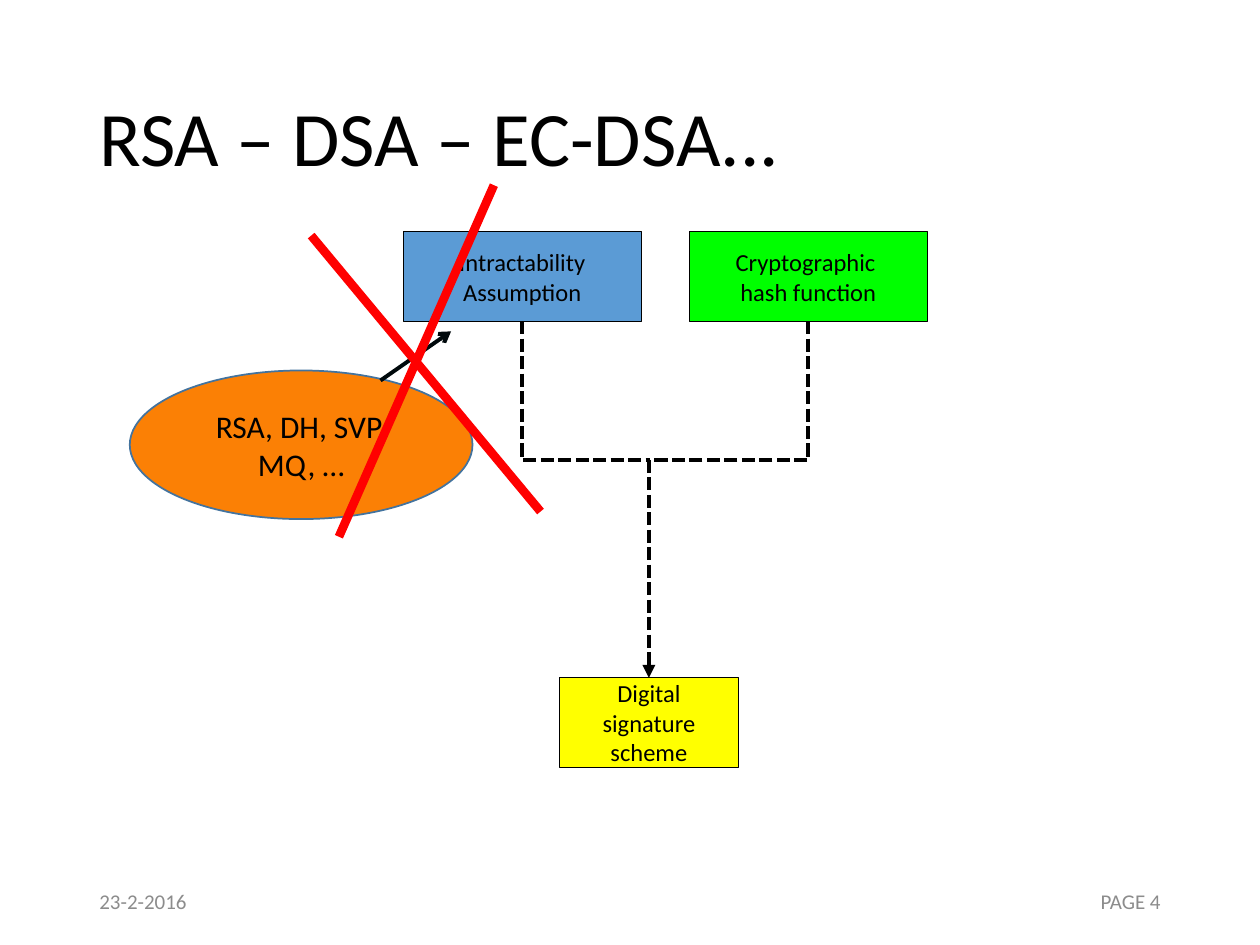
from lxml import etree
from pptx import Presentation
from pptx.dml.color import RGBColor
from pptx.enum.dml import MSO_LINE
from pptx.enum.shapes import MSO_CONNECTOR, MSO_SHAPE
from pptx.enum.text import MSO_ANCHOR, PP_ALIGN
from pptx.oxml.ns import qn
from pptx.util import Inches, Pt

STRAIGHT, ELBOW = MSO_CONNECTOR.STRAIGHT, MSO_CONNECTOR.ELBOW
RECT, OVAL = MSO_SHAPE.RECTANGLE, MSO_SHAPE.OVAL
LEFT, CENTER, RIGHT = PP_ALIGN.LEFT, PP_ALIGN.CENTER, PP_ALIGN.RIGHT
MIDDLE, DASH = MSO_ANCHOR.MIDDLE, MSO_LINE.SQUARE_DOT
COLORS = {
    "black": "000000", "ink": "00090C", "grey": "8C8C8C", "blue": "5B9BD5",
    "green": "00FF00", "yellow": "FFFF00", "orange": "FB8005",
    "outline": "43739E", "red": "FF0000",
}


class Deck:
    """Holds the style and the current slide, and draws each kind of element."""

    font = "Calibri"

    def __init__(self, prs):
        self.slide = prs.slides.add_slide(prs.slide_layouts[6])
        self.shapes = self.slide.shapes

    def color(self, name):
        return RGBColor.from_string(COLORS[name])

    def set_text(self, sp, text, size, color="black", align=CENTER, spacing=1.0):
        tf = sp.text_frame
        for key, value in {"word_wrap": True, "vertical_anchor": MIDDLE}.items():
            setattr(tf, key, value)
        p = tf.paragraphs[0]
        p.text = text
        for key, value in {"alignment": align, "line_spacing": spacing}.items():
            setattr(p, key, value)
        for r in p.runs:
            for key, value in {"name": self.font, "size": Pt(size)}.items():
                setattr(r.font, key, value)
            r.font.color.rgb = self.color(color)

    def text(self, box, text, size, **style):
        sp = self.shapes.add_textbox(*map(Inches, box))
        self.set_text(sp, text, size, **style)

    def shape(self, kind, box, text, fill, size=14, line="black", width=0.5):
        sp = self.shapes.add_shape(kind, *map(Inches, box))
        sp.shadow.inherit = False
        sp.fill.solid()
        sp.fill.fore_color.rgb = self.color(fill)
        self.stroke(sp, line, width)
        self.set_text(sp, text, size)
        return sp

    def stroke(self, sp, color, width, dash=None):
        sp.line.color.rgb = self.color(color)
        for key, value in {"width": Pt(width), "dash_style": dash}.items():
            setattr(sp.line, key, value)

    def line(self, start, end, color, width, dash=None, head=None, kind=STRAIGHT):
        c = self.shapes.add_connector(kind, *map(Inches, (*start, *end)))
        self.stroke(c, color, width, dash)
        spPr = c.element.spPr
        if head:
            etree.SubElement(spPr.find(qn("a:ln")), qn("a:tailEnd"), type=head)
        etree.SubElement(spPr, qn("a:effectLst"))
        return c

    def elbow(self, start, end, color, width, dash):
        (x1, y1), (x2, y2) = start, end
        cx, cy = (x1 + x2) / 2, (y1 + y2) / 2
        dx, dy = abs(y2 - y1) / 2, abs(x2 - x1) / 2
        c = self.line((cx - dx, cy - dy), (cx + dx, cy + dy), color, width, dash, kind=ELBOW)
        spPr = c.element.spPr
        spPr.find(qn("a:prstGeom")).set("prst", "bentConnector2")
        xfrm = spPr.find(qn("a:xfrm"))
        xfrm.set("rot", str((90 if x2 < x1 else 270) * 60000))
        if x2 > x1:
            xfrm.set("flipH", "1")


def main():
    prs = Presentation()
    prs.slide_width, prs.slide_height = Inches(10), Inches(7.5)
    deck = Deck(prs)

    deck.text((0.69, 0.4, 8.62, 1.45), "RSA – DSA – EC-DSA...", 44, align=LEFT, spacing=0.9)
    for x, text, align in ((0.69, "23-2-2016", LEFT), (7.06, "PAGE 4", RIGHT)):
        deck.text((x, 6.95, 2.25, 0.4), text, 12, color="grey", align=align)

    top, width, height = 1.84, 1.89, 0.71
    join = (5.15, 3.65)
    scheme = deck.shape(RECT, (4.44, 5.38, 1.42, height), "Digital signature scheme", "yellow")
    for x, text, fill in (
        (3.2, "Intractability Assumption", "blue"),
        (5.47, "Cryptographic \nhash function", "green"),
    ):
        deck.shape(RECT, (x, top, width, height), text, fill)
        deck.elbow((x + width / 2, top + height), join, "black", 2.5, DASH)
    arrow = deck.line(join, (5.15, 5.38), "black", 2.5, DASH, "triangle")
    arrow.end_connect(scheme, 0)

    deck.shape(OVAL, (1.03, 2.94, 2.72, 1.18), "RSA, DH, SVP, MQ, …", "orange", 18, "outline", 1)
    deck.line((3.02, 3.02), (3.58, 2.63), "ink", 2.25, head="arrow")
    for start, end in (((2.47, 1.87), (4.29, 4.06)), ((3.92, 1.47), (2.69, 4.26))):
        deck.line(start, end, "red", 5)

    prs.save("out.pptx")


if __name__ == "__main__":
    main()
